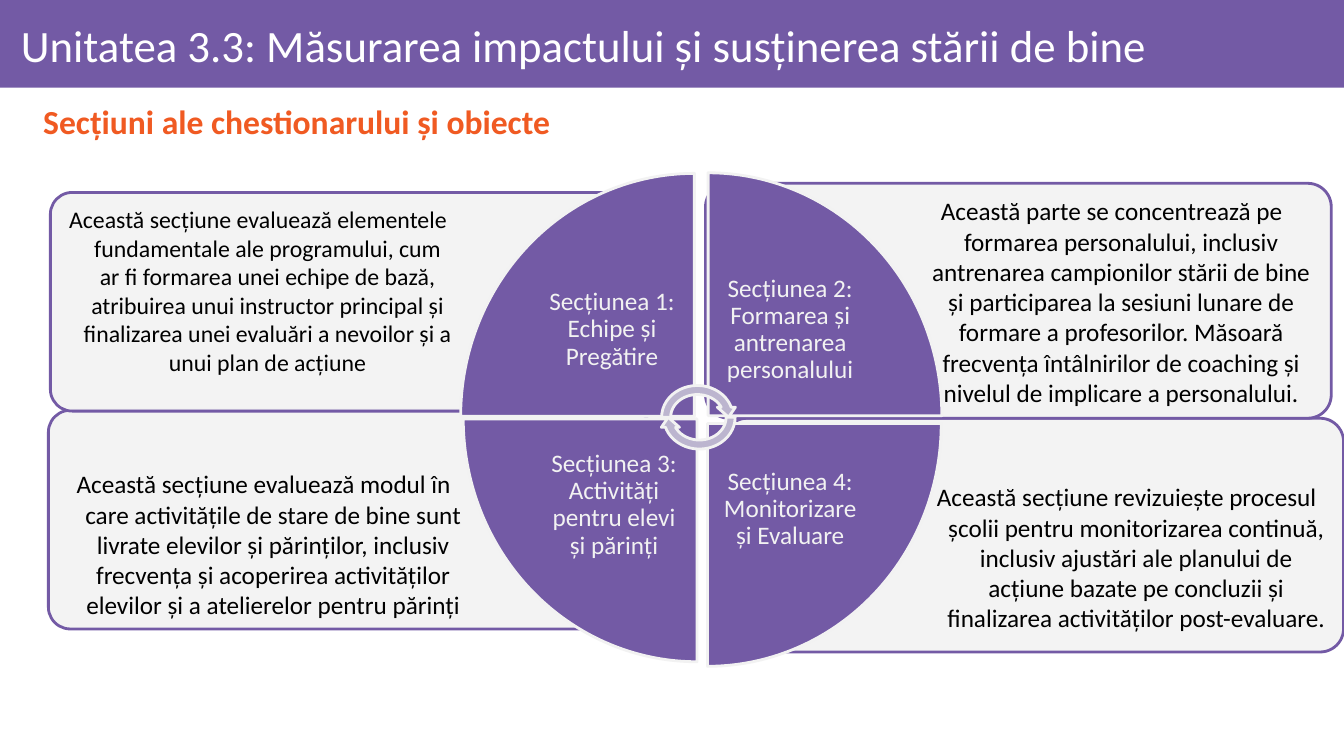
from dataclasses import dataclass

from lxml import etree
from pptx import Presentation
from pptx.dml.color import RGBColor
from pptx.enum.shapes import MSO_SHAPE
from pptx.enum.text import MSO_ANCHOR, PP_ALIGN
from pptx.oxml.ns import qn
from pptx.util import Cm, Pt

RECTANGLE = MSO_SHAPE.RECTANGLE
ROUNDED = MSO_SHAPE.ROUNDED_RECTANGLE
WEDGE = MSO_SHAPE.PIE_WEDGE
CYCLE_ARROW = MSO_SHAPE.CIRCULAR_ARROW
TOP, MIDDLE = MSO_ANCHOR.TOP, MSO_ANCHOR.MIDDLE
LEFT, CENTER = PP_ALIGN.LEFT, PP_ALIGN.CENTER


@dataclass(frozen=True)
class Theme:
    font: str = "Calibri"
    purple: str = "735AA5"
    lilac: str = "BCB5CF"
    orange: str = "F05A22"
    pale: str = "F2F2F2"
    white: str = "FFFFFF"
    black: str = "000000"
    title_size: int = 32
    subtitle_size: int = 24
    text_size: int = 18
    small_size: int = 17
    line_width: int = 2


class SlideBuilder:
    def __init__(self, slide, theme):
        self.slide = slide
        self.theme = theme

    def shape(self, kind, box, fill, line=None, rotation=0):
        item = self.slide.shapes.add_shape(kind, *map(Cm, box))
        item.shadow.inherit = False
        item.rotation = rotation
        item.fill.solid()
        item.fill.fore_color.rgb = RGBColor.from_string(fill)
        if line:
            item.line.color.rgb = RGBColor.from_string(line)
            item.line.width = Pt(self.theme.line_width)
        else:
            item.line.fill.background()
        return item

    def text(self, box, words, size, color, insets, anchor=MIDDLE,
             align=CENTER, spacing=0.9, bold=False):
        frame = self.slide.shapes.add_textbox(*map(Cm, box)).text_frame
        frame.word_wrap = True
        frame.vertical_anchor = anchor
        (frame.margin_left, frame.margin_top,
         frame.margin_right, frame.margin_bottom) = map(Cm, insets)
        paragraph = frame.paragraphs[0]
        paragraph.alignment = align
        paragraph.line_spacing = spacing
        run = paragraph.add_run()
        run.text = words
        run.font.name = self.theme.font
        run.font.size = Pt(size)
        run.font.bold = bold
        run.font.color.rgb = RGBColor.from_string(color)
        return paragraph

    def card(self, box, text_box, words, size, insets):
        panel = self.shape(ROUNDED, box, self.theme.pale, self.theme.purple)
        panel.adjustments[0] = 0.1
        # Slightly transparent panel
        color = panel.fill._xPr.find(qn("a:solidFill"))[0]
        etree.SubElement(color, qn("a:alpha"), val="90000")
        # Hanging first line
        paragraph = self.text(text_box, words, size, self.theme.black, insets,
                              anchor=TOP, spacing=1.0)
        properties = paragraph._p.get_or_add_pPr()
        properties.set("marL", str(Cm(0.48)))
        properties.set("indent", str(-Cm(0.48)))

    def quadrant(self, box, rotation, label_at, label):
        self.shape(WEDGE, box, self.theme.purple, self.theme.pale, rotation)
        self.text((*label_at, 4.17, 4.32), label, self.theme.text_size,
                  self.theme.pale, (0.36,) * 4)

    def cycle_arrow(self, left, rotation):
        self.shape(CYCLE_ARROW, (left, 9.6, 2.03, 1.83), self.theme.lilac,
                   self.theme.pale, rotation)


def main():
    theme = Theme()
    deck = Presentation()
    deck.slide_width, deck.slide_height = Cm(33.87), Cm(19.05)
    page = SlideBuilder(deck.slides.add_slide(deck.slide_layouts[6]), theme)

    # Title band and subtitle
    page.shape(RECTANGLE, (0, 0, 33.87, 2.21), theme.purple)
    page.text((0.28, 0.23, 33.17, 1.98),
              "Unitatea 3.3: Măsurarea impactului și susținerea stării de bine",
              theme.title_size, theme.white, (0.25, 0.15, 0.15, 0.15), align=LEFT)
    page.text((0.18, 2.36, 14.6, 1.52), "Secțiuni ale chestionarului și obiecte",
              theme.subtitle_size, theme.orange, (0.25, 0.13, 0.25, 0.13), bold=True)

    # Description cards, from back to front
    even = (0.18,) * 4
    cards = [
        ((18.24, 10.54, 15.62, 5.89), (23.06, 12.14, 10.67, 4.17),
         "Această secțiune revizuiește procesul școlii pentru monitorizarea "
         "continuă, inclusiv ajustări ale planului de acțiune bazate pe concluzii "
         "și finalizarea activităților post-evaluare.",
         theme.text_size, (0.18, 0, 0.18, 0)),
        ((1.22, 10.34, 15.21, 5.51), (1.35, 11.81, 10.41, 3.89),
         "Această secțiune evaluează modul în care activitățile de stare de bine "
         "sunt livrate elevilor și părinților, inclusiv frecvența și acoperirea "
         "activităților elevilor și a atelierelor pentru părinți",
         theme.text_size, (0.18, 0, 0, 0.18)),
        ((17.78, 4.62, 15.77, 5.92), (22.63, 4.75, 10.77, 4.17),
         "Această parte se concentrează pe formarea personalului, inclusiv "
         "antrenarea campionilor stării de bine și participarea la sesiuni lunare "
         "de formare a profesorilor. Măsoară frecvența întâlnirilor de coaching "
         "și nivelul de implicare a personalului.",
         theme.text_size, even),
        ((1.27, 4.85, 14.91, 5.51), (1.4, 4.98, 10.21, 3.89),
         "Această secțiune evaluează elementele fundamentale ale programului, cum "
         "ar fi formarea unei echipe de bază, atribuirea unui instructor principal "
         "și finalizarea unei evaluări a nevoilor și a unui plan de acțiune",
         theme.small_size, even),
    ]
    for card in cards:
        page.card(*card)

    # Wheel quadrants, clockwise from the upper left
    quadrants = [
        ((11.61, 4.37, 5.89, 6.12), (13.34, 6.15),
         "Secțiunea 1: Echipe și Pregătire"),
        ((17.73, 4.47, 6.12, 5.89), (17.83, 6.15),
         "Secțiunea 2: Formarea și antrenarea personalului"),
        ((17.83, 10.67, 5.89, 6.12), (17.83, 10.67),
         "Secțiunea 4: Monitorizare și Evaluare"),
        ((11.56, 10.67, 6.12, 5.89), (13.39, 10.57),
         "Secțiunea 3: Activități pentru elevi și părinți"),
    ]
    for turn, (box, label_at, label) in enumerate(quadrants):
        page.quadrant(box, 90 * turn, label_at, label)

    # Cycle arrows at the hub
    page.cycle_arrow(16.56, 0)
    page.cycle_arrow(16.61, 180)

    deck.save("out.pptx")


if __name__ == "__main__":
    main()
